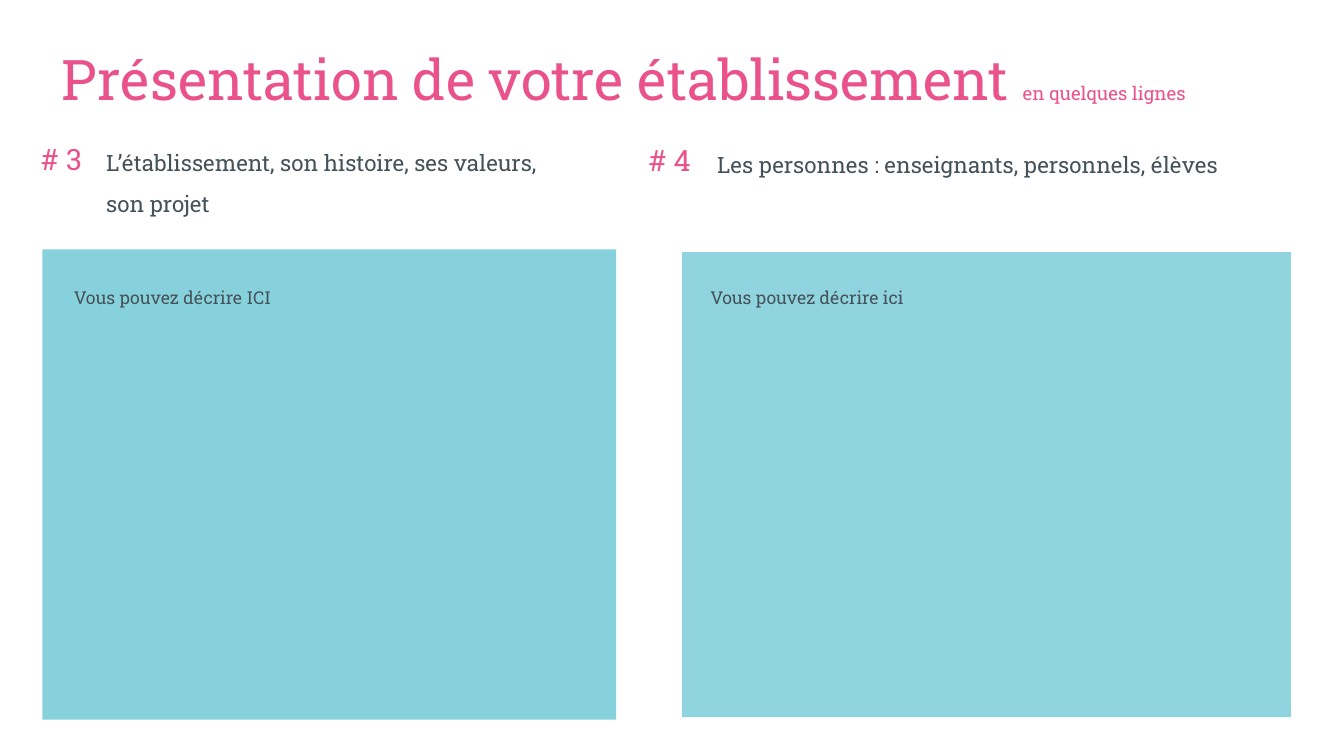
import dataclasses

import lxml.etree
import pptx
import pptx.dml.color
import pptx.enum.shapes
import pptx.enum.text
import pptx.oxml.ns
import pptx.util

Inches = pptx.util.Inches
Pt = pptx.util.Pt
RGBColor = pptx.dml.color.RGBColor
Align = pptx.enum.text.PP_ALIGN
qn = pptx.oxml.ns.qn


@dataclasses.dataclass(frozen=True)
class Theme:
    font: str = "Roboto Slab"
    pink: RGBColor = RGBColor(0xEA, 0x52, 0x8B)
    slate: RGBColor = RGBColor(0x45, 0x52, 0x59)
    teal: RGBColor = RGBColor(0x5E, 0xC2, 0xD0)
    title: float = 60
    subtitle: float = 20
    number: float = 31.5
    heading: float = 24
    prompt: float = 19
    title_line: float = 76
    heading_line: float = 44.1
    prompt_line: float = 26.6


THEME = Theme()


@dataclasses.dataclass(frozen=True)
class Section:
    number: str
    number_box: tuple
    heading: str
    heading_box: tuple
    panel_box: tuple
    opacity: int
    prompt: str
    prompt_box: tuple


SECTIONS = (
    Section("# 3", (0.51, 2.01, 0.81, 0.57),
            "L’établissement, son histoire, ses valeurs, son projet",
            (1.58, 2.01, 6.75, 1.19),
            (0.63, 3.71, 8.54, 7), 74,
            "Vous pouvez décrire ICI", (0.88, 4.22, 7.45, 0.35)),
    Section("# 4", (9.6, 2.03, 0.73, 0.57),
            "Les personnes : enseignants, personnels, élèves",
            (10.67, 2.03, 7.58, 0.55),
            (10.15, 3.75, 9.06, 6.92), 69,
            "Vous pouvez décrire ici", (10.35, 4.21, 8.48, 0.35)),
)


def place(shape, box):
    shape.left, shape.top, shape.width, shape.height = map(Inches, box)


def write(shape, box, text, size, line, color, align=Align.LEFT, indent=0):
    place(shape, box)
    frame = shape.text_frame
    frame.margin_left = frame.margin_top = 0
    frame.margin_right = frame.margin_bottom = 0
    frame.word_wrap = True
    frame.auto_size = pptx.enum.text.MSO_AUTO_SIZE.NONE
    frame.vertical_anchor = pptx.enum.text.MSO_ANCHOR.TOP
    paragraph = frame.paragraphs[0]
    paragraph.text = text
    paragraph.alignment = align
    paragraph.line_spacing = Pt(line)
    paragraph.space_before = Pt(0)
    font = paragraph.font
    font.name, font.size, font.bold = THEME.font, Pt(size), False
    font.color.rgb = color
    properties = paragraph._p.get_or_add_pPr()
    properties.set("marL", str(Inches(indent)))
    properties.set("indent", "0")
    if shape.is_placeholder:
        bullet = lxml.etree.Element(qn("a:buNone"))
        properties.find(qn("a:defRPr")).addprevious(bullet)
    return paragraph


def add_title(slide):
    paragraph = write(slide.shapes.title, (0.92, 0.61, 18.47, 1.01),
                      "Présentation de votre établissement ",
                      THEME.title, THEME.title_line, THEME.pink)
    subtitle = paragraph.add_run()
    subtitle.text = "en quelques lignes"
    subtitle.font.size = Pt(THEME.subtitle)


def add_panel(slide, box, opacity):
    panel = slide.shapes.add_shape(
        pptx.enum.shapes.MSO_SHAPE.RECTANGLE, *map(Inches, box))
    panel.shadow.inherit = False
    panel.line.fill.background()
    panel.fill.solid()
    panel.fill.fore_color.rgb = THEME.teal
    color = panel.element.spPr.find(".//" + qn("a:srgbClr"))
    lxml.etree.SubElement(color, qn("a:alpha"), val=str(opacity * 1000))
    slide.shapes.title.element.addprevious(panel.element)


def add_section(slide, section, heading, prompt):
    add_panel(slide, section.panel_box, section.opacity)
    number = slide.shapes.add_textbox(*map(Inches, section.number_box))
    write(number, section.number_box, section.number,
          THEME.number, THEME.heading_line, THEME.pink, Align.CENTER)
    write(heading, section.heading_box, section.heading,
          THEME.heading, THEME.heading_line, THEME.slate)
    write(prompt, section.prompt_box, section.prompt,
          THEME.prompt, THEME.prompt_line, THEME.slate, indent=0.22)


def main():
    presentation = pptx.Presentation()
    presentation.slide_width = Inches(20)
    presentation.slide_height = Inches(11.25)
    layout = presentation.slide_layouts.get_by_name("Comparison")
    slide = presentation.slides.add_slide(layout)
    add_title(slide)
    bodies = list(slide.placeholders)[1:5]
    for section, heading, prompt in zip(SECTIONS, bodies[::2], bodies[1::2]):
        add_section(slide, section, heading, prompt)
    presentation.save("out.pptx")


if __name__ == "__main__":
    main()
